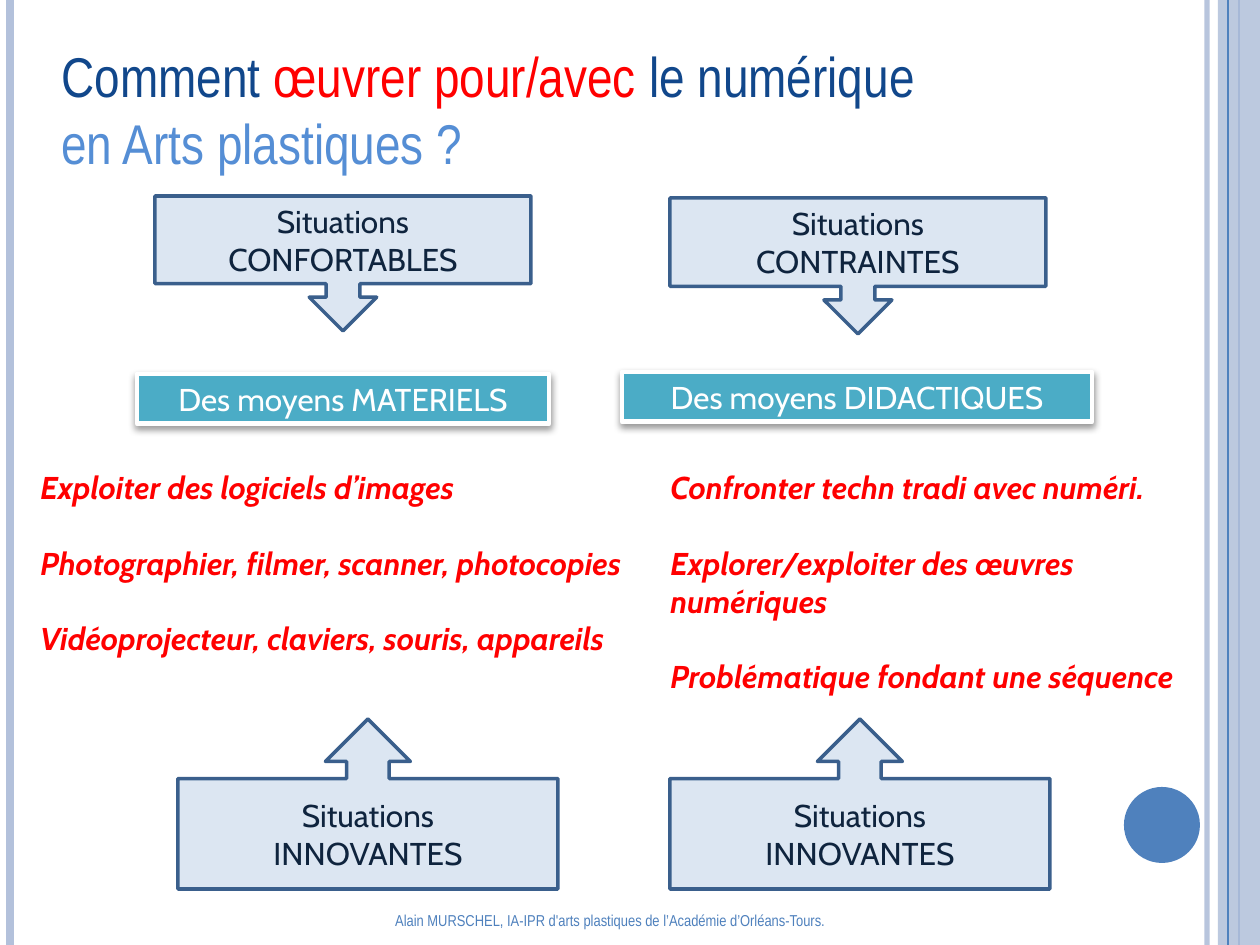
from lxml import etree
from pptx import Presentation
from pptx.dml.color import RGBColor
from pptx.enum.shapes import MSO_CONNECTOR, MSO_SHAPE
from pptx.enum.text import MSO_ANCHOR, PP_ALIGN
from pptx.oxml.ns import qn
from pptx.util import Pt

PX = 914400 / 126
WIDTH, HEIGHT = 1260, 945
STRAIGHT = MSO_CONNECTOR.STRAIGHT
RECTANGLE, OVAL = MSO_SHAPE.RECTANGLE, MSO_SHAPE.OVAL
DOWN_CALLOUT, UP_CALLOUT = MSO_SHAPE.DOWN_ARROW_CALLOUT, MSO_SHAPE.UP_ARROW_CALLOUT
LEFT, CENTER = PP_ALIGN.LEFT, PP_ALIGN.CENTER
TOP, MIDDLE = MSO_ANCHOR.TOP, MSO_ANCHOR.MIDDLE

WHITE = RGBColor(0xFF, 0xFF, 0xFF)
PALE_BLUE = RGBColor(0xB3, 0xC1, 0xDB)
BLUE = RGBColor(0x4F, 0x81, 0xBD)
TITLE_BLUE = RGBColor(0x11, 0x47, 0x8B)
LIGHT_BLUE = RGBColor(0x55, 0x8E, 0xD5)
RED = RGBColor(0xFF, 0x00, 0x00)
TEAL = RGBColor(0x4B, 0xAC, 0xC6)
CALLOUT_FILL = RGBColor(0xDC, 0xE6, 0xF2)
CALLOUT_LINE = RGBColor(0x3A, 0x5F, 0x8C)
NAVY = RGBColor(0x0F, 0x24, 0x3E)

NARROW, CABIN = "Arial Narrow", "Cabin"
BODY_SIZE = 18
LINE_GAP = 21.6


def px(*lengths):
    return [round(length * PX) for length in lengths]


def set_alpha(element, percent):
    color = element.find(".//" + qn("a:srgbClr"))
    etree.SubElement(color, qn("a:alpha")).set("val", str(percent * 1000))


class SlideBuilder:
    def __init__(self, slide):
        self.slide = slide

    def vertical_line(self, x, color, width, alpha=100):
        line = self.slide.shapes.add_connector(STRAIGHT, *px(x, 0, x, HEIGHT))
        line.line.color.rgb = color
        line.line.width = Pt(width)
        properties = line._element.spPr
        if alpha < 100:
            set_alpha(properties, alpha)
        etree.SubElement(properties, qn("a:effectLst"))

    def shape(self, kind, box, fill, line=None, width=0, alpha=100):
        shape = self.slide.shapes.add_shape(kind, *px(*box))
        shape.shadow.inherit = False
        shape.fill.solid()
        shape.fill.fore_color.rgb = fill
        if alpha < 100:
            set_alpha(shape._element.spPr, alpha)
        if line is None:
            shape.line.fill.background()
        else:
            shape.line.color.rgb = line
            shape.line.width = Pt(width)
        return shape

    def fill_text(self, frame, lines, font, size, align=LEFT, anchor=TOP, emphasis=False):
        frame.word_wrap = True
        frame.vertical_anchor = anchor
        for index, runs in enumerate(lines):
            paragraph = frame.add_paragraph() if index else frame.paragraphs[0]
            paragraph.alignment = align
            for words, color in runs:
                run = paragraph.add_run()
                run.text = words
                run.font.name = font
                run.font.size = Pt(size)
                run.font.color.rgb = color
                run.font.bold = run.font.italic = emphasis

    def text(self, box, lines, font, size, align=LEFT, emphasis=False):
        frame = self.slide.shapes.add_textbox(*px(*box)).text_frame
        self.fill_text(frame, lines, font, size, align, emphasis=emphasis)
        return frame

    def examples(self, box, groups, wrap=True):
        lines = [[(words, RED)] for group in groups for words in group]
        frame = self.text(box, lines, CABIN, BODY_SIZE, emphasis=True)
        frame.word_wrap = wrap
        start = 0
        for group in groups[:-1]:
            start += len(group)
            frame.paragraphs[start].space_before = Pt(LINE_GAP)

    def banner(self, box, words):
        shape = self.shape(RECTANGLE, box, TEAL, WHITE, 2.75)
        effects = shape._element.spPr.find(qn("a:effectLst"))
        shadow = etree.SubElement(effects, qn("a:outerShdw"))
        for name, value in (("blurRad", Pt(4)), ("dist", Pt(2)), ("dir", 90 * 60000)):
            shadow.set(name, str(int(value)))
        shadow.set("rotWithShape", "0")
        etree.SubElement(shadow, qn("a:srgbClr")).set("val", "000000")
        set_alpha(shadow, 40)
        self.fill_text(shape.text_frame, [[(words, WHITE)]], CABIN, BODY_SIZE, CENTER)

    def callout(self, kind, box, name):
        shape = self.shape(kind, box, CALLOUT_FILL, CALLOUT_LINE, 2)
        lines = [[("Situations", NAVY)], [(name, NAVY)]]
        self.fill_text(shape.text_frame, lines, CABIN, BODY_SIZE, CENTER, MIDDLE)


def main():
    presentation = Presentation()
    presentation.slide_width, presentation.slide_height = px(WIDTH, HEIGHT)
    builder = SlideBuilder(presentation.slides.add_slide(presentation.slide_layouts[6]))

    builder.vertical_line(1207, PALE_BLUE, 3, 93)
    builder.vertical_line(10, PALE_BLUE, 4.5)
    builder.vertical_line(1239, BLUE, 1.5)
    builder.shape(RECTANGLE, (1218, 0, 42, HEIGHT), PALE_BLUE, alpha=87)
    builder.vertical_line(1228, BLUE, 0.75)
    builder.shape(OVAL, (1124, 787, 76, 76), BLUE)

    footer = "Alain MURSCHEL, IA-IPR d'arts plastiques de l’Académie d’Orléans-Tours."
    builder.text((0, 905, 1220, 40), [[(footer, BLUE)]], NARROW, 9, CENTER)
    title = [
        [("Comment", TITLE_BLUE), (" œuvrer pour/avec ", RED), ("le numérique", TITLE_BLUE)],
        [("en Arts plastiques ?", LIGHT_BLUE)],
    ]
    builder.text((49, 35, 1125, 149), title, NARROW, 32)

    builder.banner((622, 372, 470, 50), "Des moyens DIDACTIQUES")
    builder.banner((137, 374, 412, 50), "Des moyens MATERIELS")

    builder.examples((28, 462, 630, 204), [
        ["Exploiter des logiciels d’images"],
        ["Photographier, filmer, scanner, photocopies"],
        ["Vidéoprojecteur, claviers, souris, appareils"],
    ])
    builder.examples((658, 462, 544, 242), [
        ["Confronter techn tradi avec numéri."],
        ["Explorer/exploiter des œuvres", "numériques"],
        ["Problématique fondant une séquence"],
    ], wrap=False)

    builder.callout(DOWN_CALLOUT, (155, 196, 376, 135), "CONFORTABLES")
    builder.callout(DOWN_CALLOUT, (670, 198, 376, 136), "CONTRAINTES")
    for left in (670, 178):
        builder.callout(UP_CALLOUT, (left, 719, 380, 170), "INNOVANTES")

    presentation.save("out.pptx")


if __name__ == "__main__":
    main()
